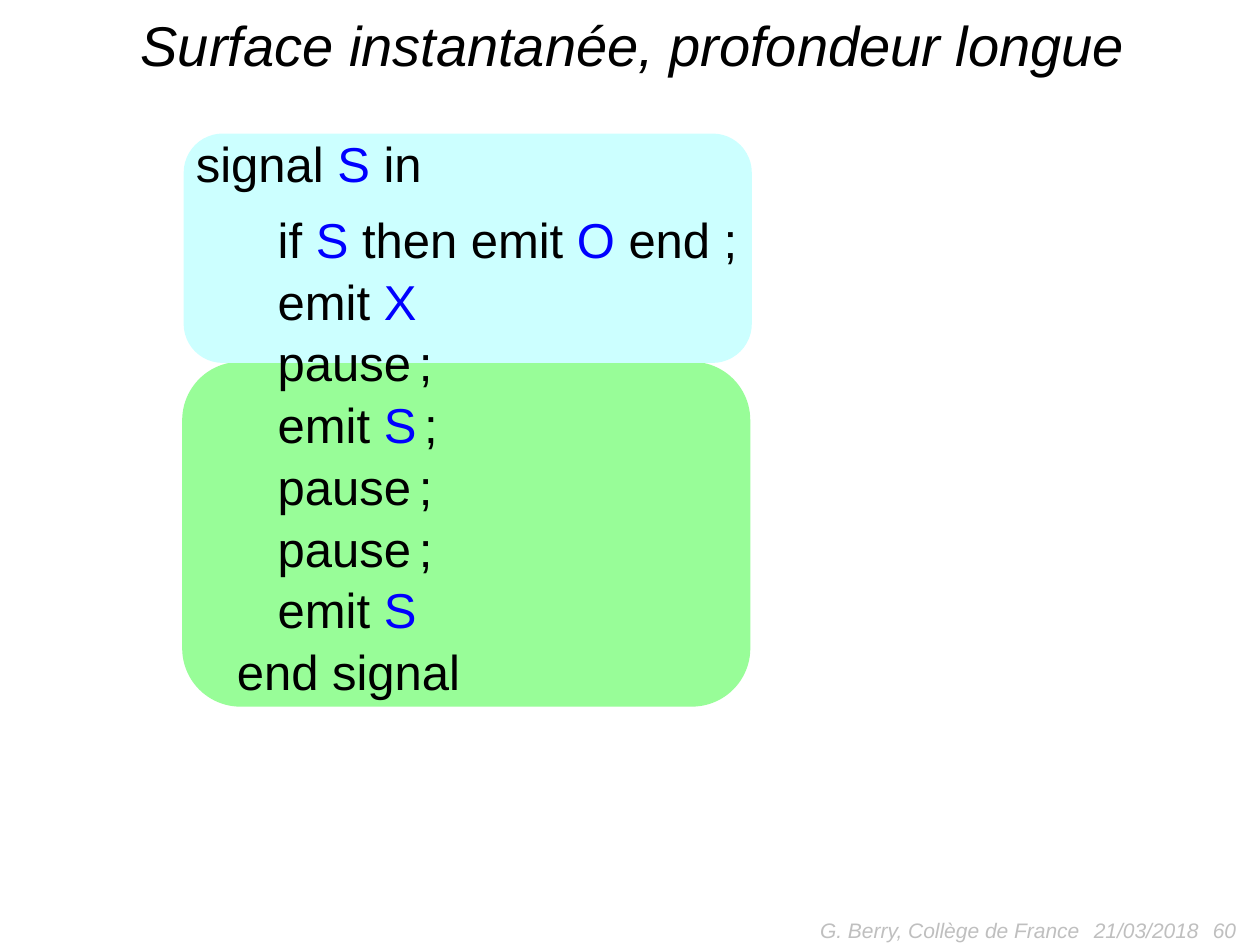
"""Build the slide showing the instantaneous surface and long depth of a program."""
from dataclasses import dataclass

from pptx import Presentation
from pptx.dml.color import RGBColor
from pptx.enum.shapes import MSO_SHAPE
from pptx.enum.text import MSO_ANCHOR as Anchor, MSO_AUTO_SIZE as AutoSize, PP_ALIGN as Align
from pptx.util import Cm, Pt

COLORS = {
    "text": "000000",
    "signal": "0000FF",
    "footer": "BFBFBF",
    "surface": "CCFFFF",
    "depth": "98FD98",
}
CODE_SIZE = 28
BODY_INDENT = 1.65


@dataclass(frozen=True)
class Box:
    left: float
    top: float
    width: float
    height: float

    def lengths(self) -> tuple:
        return Cm(self.left), Cm(self.top), Cm(self.width), Cm(self.height)


@dataclass(frozen=True)
class Run:
    text: str
    color: str = "text"
    size: float = CODE_SIZE


@dataclass(frozen=True)
class Line:
    runs: tuple
    indent: float = BODY_INDENT
    after: float = 0


@dataclass(frozen=True)
class Zone:
    color: str
    box: Box


@dataclass(frozen=True)
class Footer:
    text: str
    box: Box
    align: Align


def signal(name: str) -> Run:
    return Run(name, "signal")


END = (Run(" ", size=16), Run(";"))
PAUSE = Line((Run("pause"), *END))
CODE = [
    Line((Run("signal "), signal("S"), Run(" in")), indent=0, after=8),
    Line((Run("if "), signal("S "), Run("then emit "), signal("O "), Run("end ;"))),
    Line((Run("emit "), signal("X"))),
    PAUSE,
    Line((Run("emit "), signal("S"), *END)),
    PAUSE,
    PAUSE,
    Line((Run("emit "), signal("S"))),
    Line((Run("end signal"),), indent=BODY_INDENT / 2),
]
ZONES = [
    Zone("depth", Box(3.7, 7.32, 11.4, 6.9)),
    Zone("surface", Box(3.73, 2.72, 11.4, 4.57)),
]
FOOTERS = [
    Footer("21/03/2018", Box(21.8, 18.44, 3, 0.61), Align.LEFT),
    Footer("60", Box(23.5, 18.44, 1.67, 0.61), Align.RIGHT),
    Footer("G. Berry, Collège de France", Box(13.97, 18.44, 8.05, 0.61), Align.RIGHT),
]


def add_text(p, text: str, *, color: str = "text", size: float = CODE_SIZE,
             italic: bool = False) -> None:
    """Append one formatted run to a paragraph."""
    r = p.add_run()
    r.text = text
    r.font.name = "Arial"
    r.font.size = Pt(size)
    r.font.italic = italic
    r.font.color.rgb = RGBColor.from_string(COLORS[color])


def add_title(s, text: str, box: Box) -> None:
    """Place and fill the title placeholder."""
    sp = s.shapes.title
    sp.left, sp.top, sp.width, sp.height = box.lengths()
    tf = sp.text_frame
    tf.auto_size = AutoSize.NONE
    p = tf.paragraphs[0]
    p.alignment = Align.CENTER
    add_text(p, text, size=32, italic=True)


def add_zone(s, zone: Zone) -> None:
    """Draw one rounded background zone."""
    sp = s.shapes.add_shape(MSO_SHAPE.ROUNDED_RECTANGLE, *zone.box.lengths())
    color = RGBColor.from_string(COLORS[zone.color])
    sp.shadow.inherit = False
    sp.fill.solid()
    sp.fill.fore_color.rgb = color
    sp.line.color.rgb = color
    sp.line.width = Pt(1.5)


def add_footer(s, footer: Footer) -> None:
    """Draw one footer text."""
    tf = s.shapes.add_textbox(*footer.box.lengths()).text_frame
    tf.word_wrap = True
    tf.vertical_anchor = Anchor.MIDDLE
    tf.margin_top = tf.margin_bottom = 0
    p = tf.paragraphs[0]
    p.alignment = footer.align
    add_text(p, footer.text, color="footer", size=12, italic=True)


def add_code(s, lines: list[Line], box: Box) -> None:
    """Draw the program, one paragraph per line."""
    tf = s.shapes.add_textbox(*box.lengths()).text_frame
    tf.word_wrap = True
    for i, line in enumerate(lines):
        p = tf.add_paragraph() if i else tf.paragraphs[0]
        p.line_spacing = 1.05
        p.space_after = Pt(line.after)
        p._p.get_or_add_pPr().set("marL", str(Cm(line.indent)))
        for run in line.runs:
            add_text(p, run.text, color=run.color, size=run.size)


def main() -> None:
    """Create and save the presentation."""
    prs = Presentation()
    prs.slide_width, prs.slide_height = Cm(25.4), Cm(19.05)
    s = prs.slides.add_slide(prs.slide_layouts[5])
    for zone in ZONES:
        add_zone(s, zone)
    for footer in FOOTERS:
        add_footer(s, footer)
    add_title(s, "Surface instantanée, profondeur longue", Box(0.38, 0.08, 24.77, 1.63))
    add_code(s, CODE, Box(3.7, 2.51, 11.6, 11.86))
    prs.save("out.pptx")


if __name__ == "__main__":
    main()
